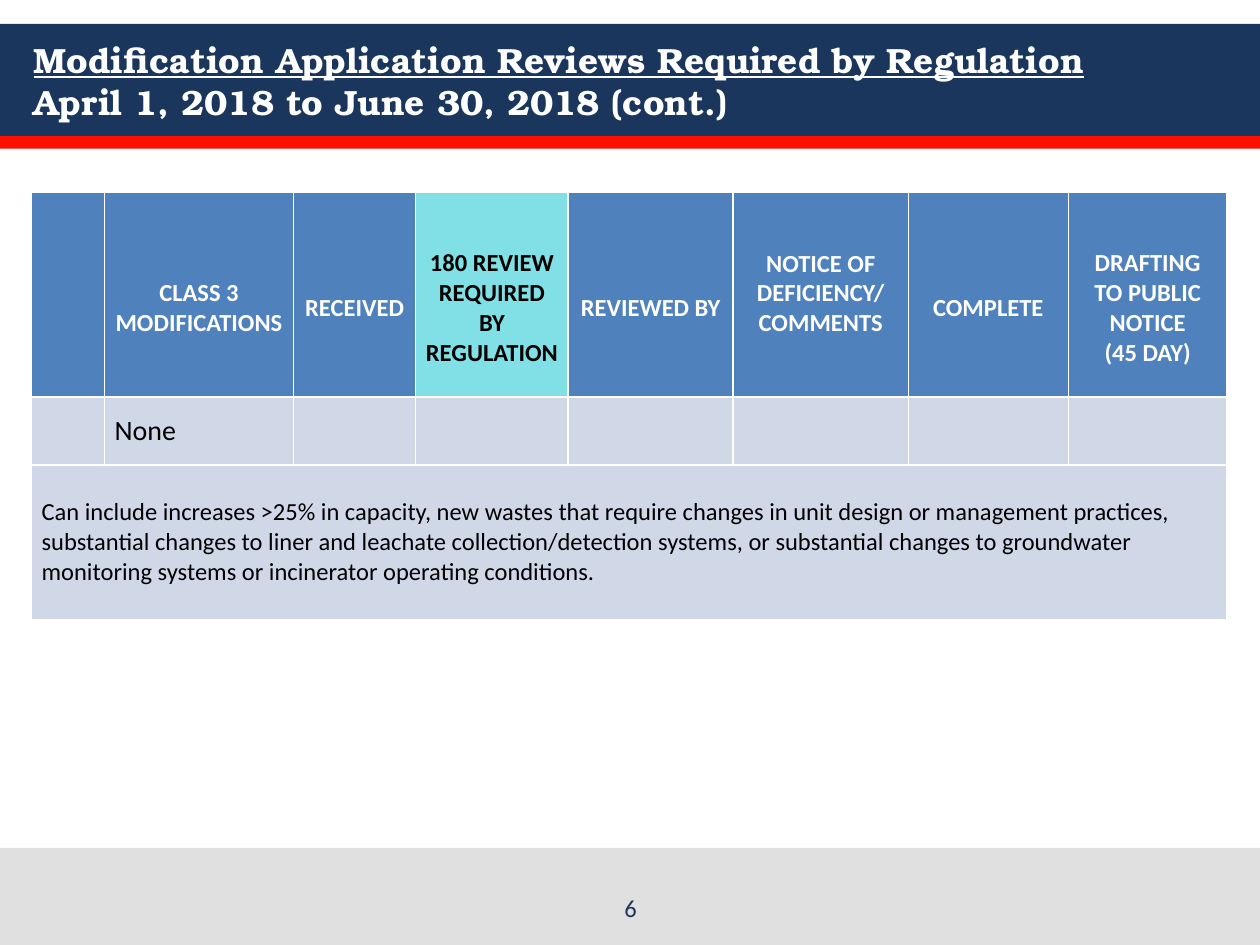
from lxml import etree
from pptx import Presentation
from pptx.dml.color import RGBColor
from pptx.enum.shapes import MSO_SHAPE
from pptx.enum.text import MSO_ANCHOR, PP_ALIGN
from pptx.oxml.ns import qn
from pptx.util import Inches, Pt


def paint(fill, color):
    fill.solid()
    fill.fore_color.rgb = RGBColor.from_string(color)


def style(para, size, color, bold=False, font="Calibri", align=PP_ALIGN.LEFT):
    para.alignment = align
    for run in para.runs:
        run.font.name, run.font.size, run.font.bold = font, Pt(size), bold
        paint(run.font.fill, color)


NAVY, WHITE, BLACK = "1B365D", "FFFFFF", "000000"
BLUE, AQUA, PALE = "4F81BD", "81E0E5", "D0D8E8"

prs = Presentation()
prs.slide_width, prs.slide_height = Inches(10), Inches(7.5)
slide = prs.slides.add_slide(prs.slide_layouts[6])

# Title band, red stripe and footer band
for top, height, color in [(0.19, 0.89, NAVY), (1.08, 0.1, "FF0F00"),
                           (6.73, 0.77, "E0E0E0")]:
    band = slide.shapes.add_shape(MSO_SHAPE.RECTANGLE, 0, Inches(top),
                                  Inches(10), Inches(height))
    band.shadow.inherit = False
    band.line.fill.background()
    paint(band.fill, color)

# Title
title = slide.shapes.add_textbox(Inches(0.17), Inches(0.19),
                                 Inches(9.67), Inches(0.9)).text_frame
title.word_wrap = True
title.vertical_anchor = MSO_ANCHOR.MIDDLE
para = title.paragraphs[0]
para.text = ("Modification Application Reviews Required by Regulation\v"
             "April 1, 2018 to June 30, 2018 (cont.)")
style(para, 20, WHITE, True, "TeX Gyre Bonum")
para.runs[0].font.underline = True

# Table grid
widths = [0.58, 1.5, 0.97, 1.21, 1.31, 1.39, 1.27, 1.26]
heights = [1.64, 0.54, 1.23]
table = slide.shapes.add_table(3, 8, Inches(0.25), Inches(1.51),
                               Inches(sum(widths)), Inches(sum(heights))).table
for col, width in zip(table.columns, widths):
    col.width = Inches(width)
for row, height in zip(table.rows, heights):
    row.height = Inches(height)
table.cell(2, 0).merge(table.cell(2, 7))

# Cell fills, margins and white borders
for r, row in enumerate(table.rows):
    for c, cell in enumerate(row.cells):
        paint(cell.fill, PALE if r else AQUA if c == 3 else BLUE)
        cell.vertical_anchor = MSO_ANCHOR.MIDDLE
        cell.margin_left = cell.margin_right = Inches(0.08)
        cell.margin_top = cell.margin_bottom = 0
        props = cell._tc.get_or_add_tcPr()
        for i, side in enumerate(["lnL", "lnR", "lnT", "lnB"]):
            thick = 3 if r == 0 and side == "lnT" else 1
            line = etree.Element(qn("a:" + side), w=str(Pt(thick)))
            solid = etree.SubElement(line, qn("a:solidFill"))
            etree.SubElement(solid, qn("a:srgbClr"), val=WHITE)
            props.insert(i, line)

# Header row: most labels sit one line lower than the middle
heads = ["CLASS 3 MODIFICATIONS", "RECEIVED",
         "180 REVIEW REQUIRED BY REGULATION", "REVIEWED BY",
         "NOTICE OF DEFICIENCY/ COMMENTS", "COMPLETE",
         "DRAFTING TO PUBLIC NOTICE\v(45 DAY)"]
for c, head in enumerate(heads, 1):
    cell = table.cell(0, c)
    cell.text_frame.text = head
    cell.margin_top = 0 if c == 5 else Inches(0.23)
    style(cell.text_frame.paragraphs[0], 14, BLACK if c == 3 else WHITE,
          True, align=PP_ALIGN.CENTER)

# Body rows
none = table.cell(1, 1).text_frame
none.text = "None"
style(none.paragraphs[0], 16, BLACK)

note = table.cell(2, 0).text_frame
note.text = (
    "Can include increases >25% in capacity, new wastes that require changes "
    "in unit design or management practices,\n"
    "substantial changes to liner and leachate collection/detection systems, "
    "or substantial changes to groundwater monitoring systems or incinerator "
    "operating conditions.")
for para in note.paragraphs:
    style(para, 14, BLACK)

# Page number
page = slide.shapes.add_textbox(Inches(3.42), Inches(6.97),
                                Inches(3.17), Inches(0.4)).text_frame
page.word_wrap = True
page.vertical_anchor = MSO_ANCHOR.BOTTOM
page.text = "6"
style(page.paragraphs[0], 14, NAVY, align=PP_ALIGN.CENTER)

prs.save("out.pptx")
